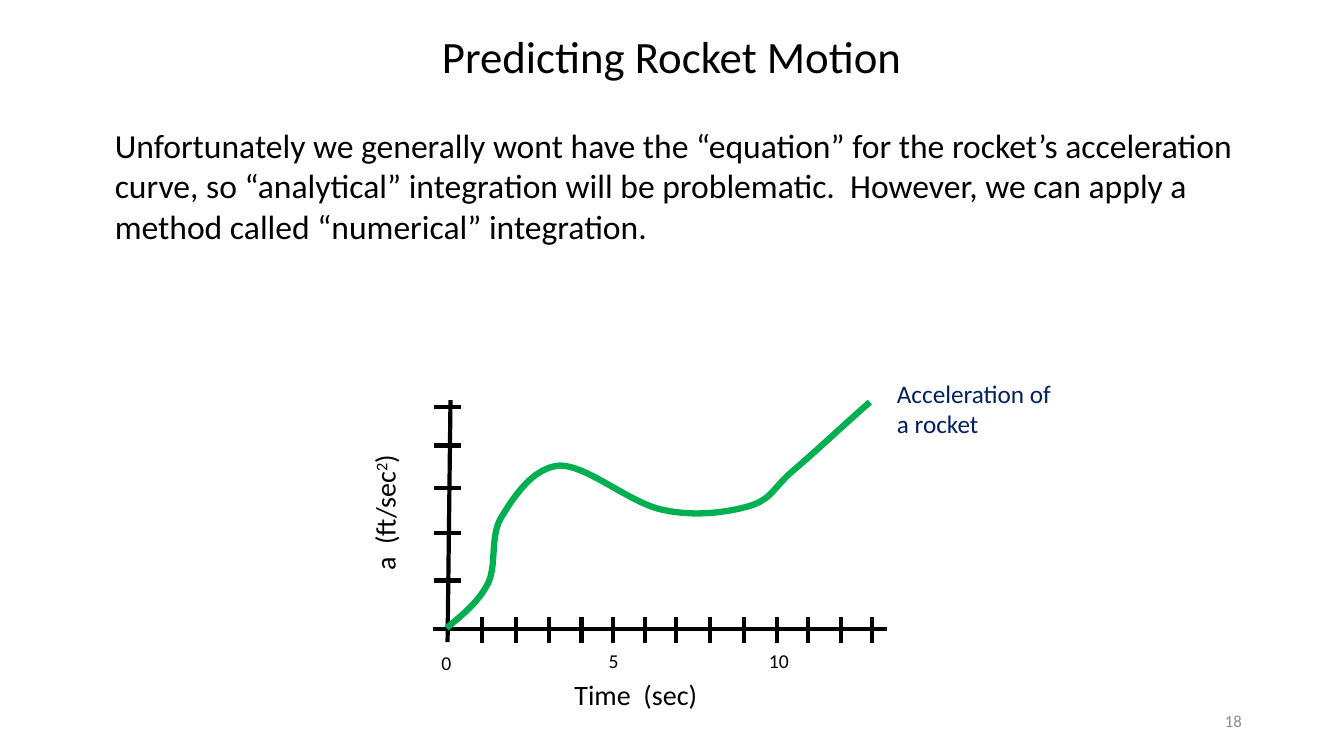
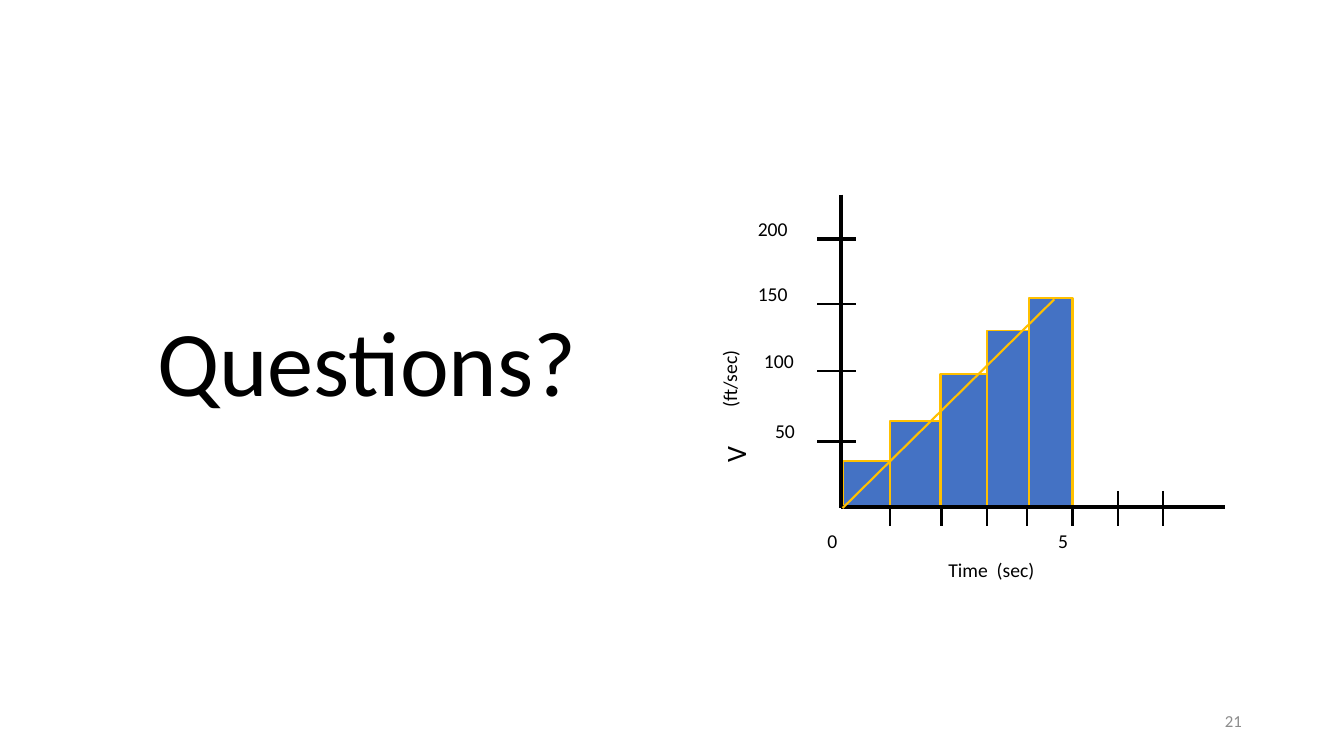
from lxml.etree import SubElement
from pptx import Presentation
from pptx.dml.color import RGBColor
from pptx.enum.shapes import MSO_CONNECTOR as Connector, MSO_SHAPE as Shape
from pptx.enum.text import MSO_ANCHOR as Anchor, MSO_AUTO_SIZE as AutoSize, PP_ALIGN as Align
from pptx.oxml.ns import qn
from pptx.util import Pt

COLORS = {
    "ink": "000000",
    "muted": "8C8C8C",
    "navy": "002060",
    "curve": "00B050",
    "bar": "4472C4",
    "outline": "FFC000",
}
FONT = "Calibri"
TITLE_ONLY = 5
CURVE_STEPS = 16


def rgb(name):
    return RGBColor.from_string(COLORS[name])


def bezier(start, control1, control2, end, t):
    u = 1 - t
    return tuple(
        u**3 * a + 3 * u**2 * t * b + 3 * u * t**2 * c + t**3 * d
        for a, b, c, d in zip(start, control1, control2, end)
    )


class Deck:
    def __init__(self):
        self.presentation = Presentation()
        self.presentation.slide_width = Pt(960)
        self.presentation.slide_height = Pt(540)
        self.slide = None

    def start_slide(self, title, box, size, number, align=Align.LEFT):
        layout = self.presentation.slide_layouts[TITLE_ONLY]
        self.slide = self.presentation.slides.add_slide(layout)
        heading = self.slide.shapes.title
        heading.left, heading.top, heading.width, heading.height = map(Pt, box)
        self.fill_text(heading.text_frame, title, size, align=align)
        self.text(number, (678.2, 500.4, 216, 28.8), 12, "muted", Align.RIGHT, Anchor.MIDDLE)

    def fill_text(self, frame, text, size, color="ink", align=Align.LEFT, anchor=Anchor.TOP,
                  raised=""):
        frame.word_wrap = True
        frame.auto_size = AutoSize.NONE
        frame.vertical_anchor = anchor
        paragraph = frame.paragraphs[0]
        paragraph.alignment = align
        for piece in text.partition(raised) if raised else (text,):
            run = paragraph.add_run()
            run.text = piece
            run.font.name = FONT
            run.font.size = Pt(size)
            run.font.color.rgb = rgb(color)
            if piece == raised:
                run.font._element.set("baseline", "30000")

    def text(self, text, box, size, color="ink", align=Align.LEFT, anchor=Anchor.TOP,
             rotation=0, raised=""):
        label = self.slide.shapes.add_textbox(*map(Pt, box))
        label.rotation = rotation
        self.fill_text(label.text_frame, text, size, color, align, anchor, raised)

    def line(self, x1, y1, x2, y2, width=3, color="ink"):
        stroke = self.slide.shapes.add_connector(Connector.STRAIGHT, *map(Pt, (x1, y1, x2, y2)))
        stroke.line.width = Pt(width)
        stroke.line.color.rgb = rgb(color)
        SubElement(stroke._element.spPr, qn("a:effectLst"))

    def bar(self, left, top, right, bottom, width):
        column = self.slide.shapes.add_shape(
            Shape.RECTANGLE, *map(Pt, (left, top, right - left, bottom - top)))
        column.shadow.inherit = False
        column.fill.solid()
        column.fill.fore_color.rgb = rgb("bar")
        column.line.color.rgb = rgb("outline")
        column.line.width = Pt(width)

    def curve(self, start, segments, width, color):
        points = []
        corner = start
        for control1, control2, end in segments:
            points += [bezier(corner, control1, control2, end, step / CURVE_STEPS)
                       for step in range(1, CURVE_STEPS + 1)]
            corner = end
        builder = self.slide.shapes.build_freeform(*map(Pt, start))
        builder.add_line_segments([(Pt(x), Pt(y)) for x, y in points], close=False)
        outline = builder.convert_to_shape()
        outline.shadow.inherit = False
        outline.fill.background()
        outline.line.color.rgb = rgb(color)
        outline.line.width = Pt(width)


def rocket_motion(deck):
    deck.start_slide("Predicting Rocket Motion", (177.8, 16.6, 604.1, 46), 32, "18", Align.CENTER)
    deck.text("Unfortunately we generally wont have the “equation” for the rocket’s acceleration "
              "curve, so “analytical” integration will be problematic.  However, we can apply a "
              "method called “numerical” integration.", (74.9, 85.7, 838.8, 94.3), 24)

    deck.line(309.6, 449.3, 633.6, 449.3)
    deck.line(321.8, 285.8, 319.7, 458.6)
    for y in (290.9, 318.2, 348.5, 380.9, 414.7):
        deck.line(310.3, y, 329, y)
    for x in (344.2, 368.6, 392.4, 415.4, 437.8, 460.8, 483.1,
              506.9, 531.4, 555.1, 577.4, 600.5, 622.8):
        deck.line(x, 440.8, x, 459)
    for second, x, y in (("0", 308.2, 461.5), ("5", 427.7, 460.1), ("10", 542.2, 460.1)):
        deck.text(second, (x, y, 47.5, 24.5), 14)
    deck.text("a  (ft/sec2)", (195.8, 319.7, 158.4, 31.7), 20, rotation=270, raised="2")
    deck.text("Time  (sec)", (403.2, 480.2, 127.4, 31.7), 20)
    deck.text("Acceleration of a rocket", (633.6, 266.4, 124.6, 51.1), 18, "navy")
    deck.curve((319, 448.6), [
        ((330.5, 439.2), (342, 429.8), (348.5, 416.9)),
        ((355, 403.9), (349.9, 383.8), (357.8, 370.1)),
        ((366.5, 355.7), (380.2, 334.1), (399.6, 332.6)),
        ((419, 331.9), (450.7, 360), (473.8, 364.3)),
        ((496.8, 369.4), (520.6, 365.8), (535.7, 361.4)),
        ((551.5, 356.4), (552.2, 348.5), (566.6, 336.2)),
        ((581, 324), (612, 295.2), (621.4, 287.3)),
    ], 4.5, "curve")


def questions(deck):
    deck.start_slide("Questions?", (105.1, 213.8, 391.7, 87.1), 66, "21")

    for speed, x, y, width in (("200", 534.2, 170.6, 3), ("150", 534.2, 217.4, 1.5),
                               ("100", 538.6, 265, 1.5), ("50", 546.5, 315.4, 1.5)):
        deck.line(583.9, y, 611.3, y, width)
        deck.text(speed, (x, y - 19.5, 56.9, 33.1), 14)
    for x in (635.8, 672.5, 704.9, 733.7, 766.1, 798.5, 830.9):
        deck.line(x, 350.6, x, 375.8, 1.5)
    for second, x in (("0", 583.9), ("5", 748.8)):
        deck.text(second, (x, 374.4, 56.9, 33.1), 14)
    deck.text("V", (512.6, 295.2, 38.9, 45.4), 20, rotation=270)
    deck.text("(ft/sec)", (483.8, 238.3, 85, 34.6), 14, rotation=270)
    deck.text("Time  (sec)", (670.3, 395.3, 139.7, 33.1), 14)

    edges = (601.9, 635.8, 671.8, 704.9, 735.1, 766.1)
    tops = (329, 301, 267.1, 236.2, 213.1)
    widths = (1.5, 1.5, 1.5, 1, 1.5)
    widths = (1.5, 1.5, 1.5, 1.5, 1.5) if len(widths) != len(tops) else (1.5, 1.5, 1.5, 1, 1.5)
    for left, right, top, width in zip(edges, edges[1:], tops, widths):
        deck.bar(left, top, right, 362.3, width)
    deck.line(600.5, 362.3, 874.8, 362.3)
    deck.line(600.5, 139, 600.5, 362.9)
    deck.line(601.9, 362.9, 753.1, 213.8, 1.5, "outline")


def main():
    deck = Deck()
    rocket_motion(deck)
    questions(deck)
    deck.presentation.save("out.pptx")


if __name__ == "__main__":
    main()
